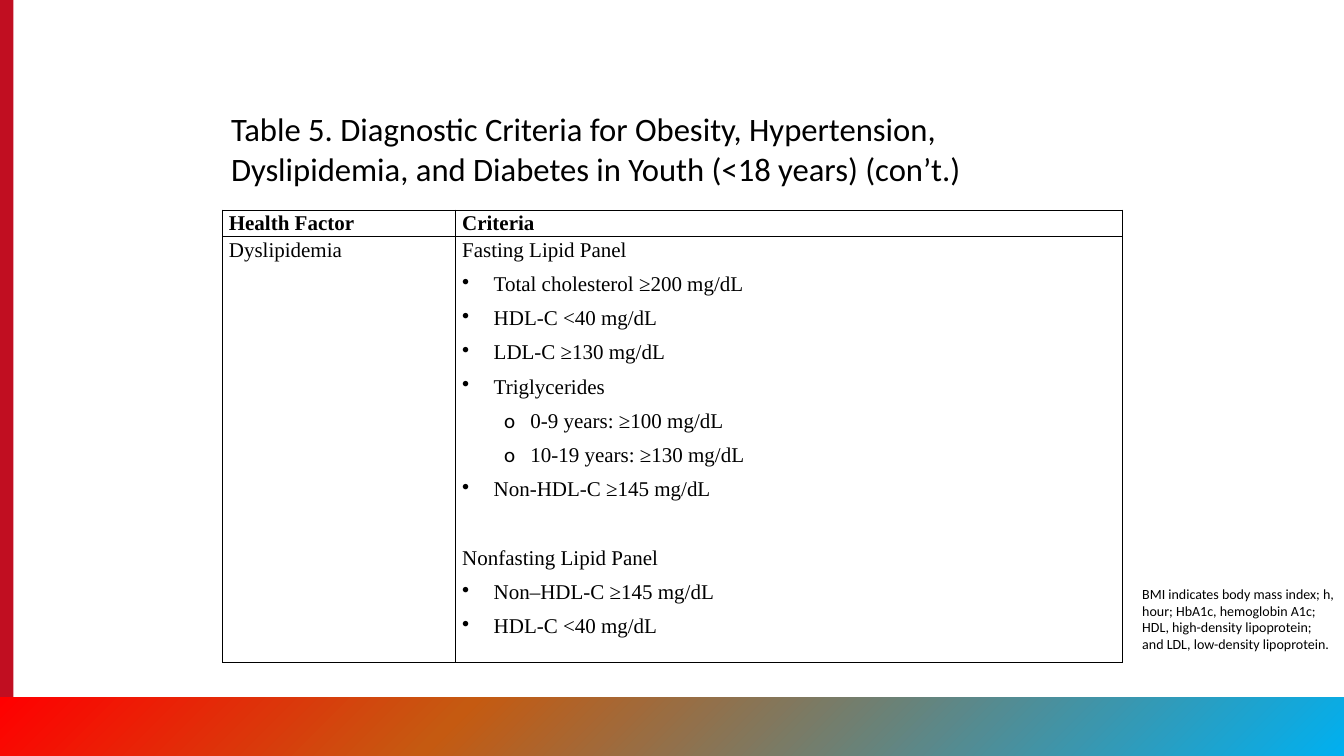
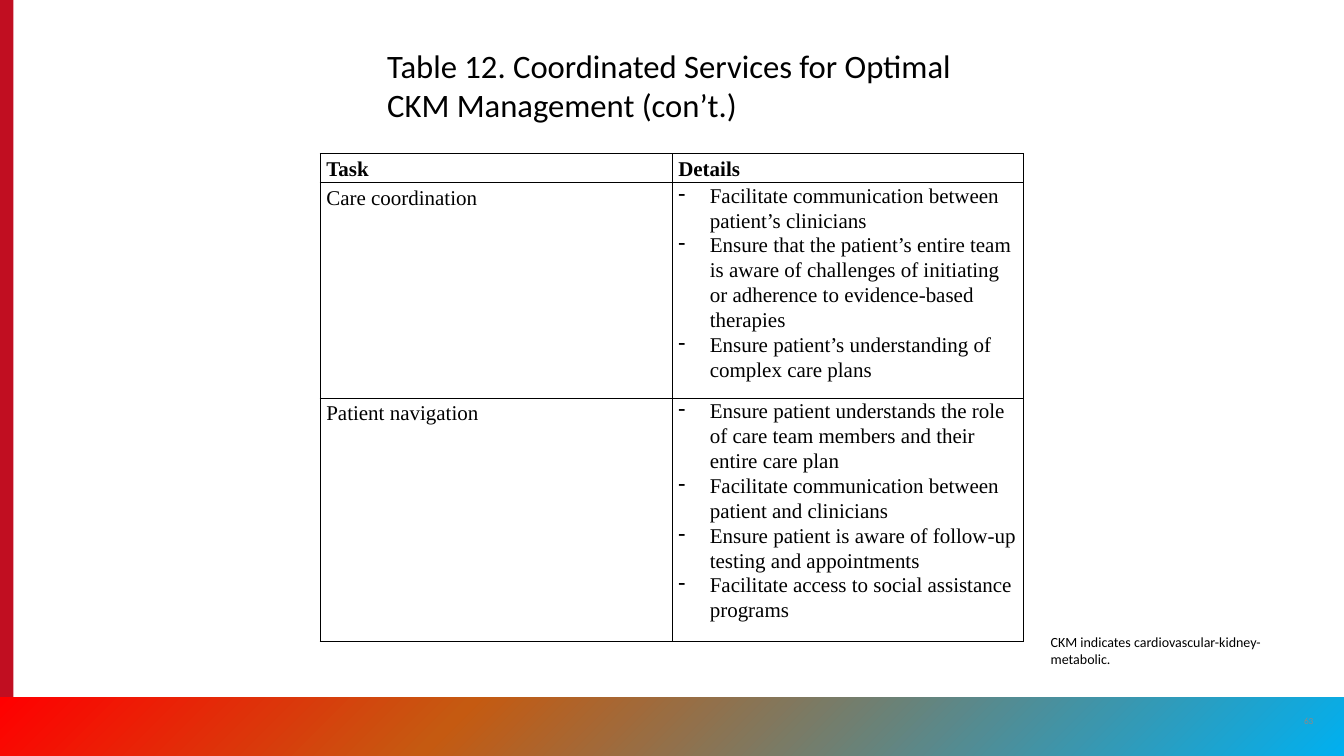
"""Build two slides with clinical criteria and care coordination tables."""
from copy import deepcopy

from lxml import etree
from pptx import Presentation
from pptx.dml.color import RGBColor
from pptx.enum import shapes, text
from pptx.oxml.ns import qn
from pptx.util import Pt

BLACK = RGBColor(0x00, 0x00, 0x00)
CRIMSON = RGBColor(0xC1, 0x0E, 0x21)
GREY = RGBColor(0x8A, 0x8B, 0x8A)
BAND = [(0, RGBColor(0x00, 0xB0, 0xF0)),
        (0.66, RGBColor(0xC5, 0x5A, 0x11)),
        (1, RGBColor(0xFF, 0x00, 0x00))]
SANS, SERIF = "Calibri", "Times New Roman"
WIDE, HIGH = 1152, 648

STYLES = {
    "plain": dict(after=8),
    "head": dict(after=8, bold=True),
    "part": dict(after=8, before=29.3),
    "dot": dict(after=8, mark="•", left=27, hang=27),
    "sub": dict(after=8, mark="o", left=58.5, hang=22.5, level=1),
    "task": dict(after=8, left=17.28, hang=18, lead=1.15),
    "title": dict(after=8, left=17.28, hang=18, lead=1.15, bold=True),
    "dash": dict(mark="-", left=27, hang=27),
}

SLIDES = [
    dict(
        title="Table 5. Diagnostic Criteria for Obesity, Hypertension, "
              "Dyslipidemia, and Diabetes in Youth (<18 years) (con’t.)",
        head=(190.8, 90, 771, 75),
        spot=(190.8, 180),
        cols=(200, 571),
        rows=(22.3, 365),
        cells=[
            [[("head", "Health Factor")], [("head", "Criteria")]],
            [[("plain", "Dyslipidemia")],
             [("plain", "Fasting Lipid Panel"),
              ("dot", "Total cholesterol ≥200 mg/dL"),
              ("dot", "HDL-C <40 mg/dL"),
              ("dot", "LDL-C ≥130 mg/dL"),
              ("dot", "Triglycerides"),
              ("sub", "0-9 years: ≥100 mg/dL"),
              ("sub", "10-19 years: ≥130 mg/dL"),
              ("dot", "Non-HDL-C ≥145 mg/dL"),
              ("part", "Nonfasting Lipid Panel"),
              ("dot", "Non–HDL-C ≥145 mg/dL"),
              ("dot", "HDL-C <40 mg/dL")]],
        ],
        note="BMI indicates body mass index; h, hour; HbA1c, hemoglobin A1c; "
             "HDL, high-density lipoprotein; and LDL, low-density lipoprotein.",
        foot=(972, 498.2, 180, 94),
        page=None),
    dict(
        title="Table 12. Coordinated Services for Optimal "
              "CKM Management (con’t.)",
        head=(324.7, 35.3, 502.6, 75),
        spot=(274.3, 131.8),
        cols=(301.7, 301.7),
        rows=(24.9, 184.3, 208.3),
        cells=[
            [[("title", "Task")], [("title", "Details")]],
            [[("task", "Care coordination")],
             [("dash", "Facilitate communication between patient’s clinicians"),
              ("dash", "Ensure that the patient’s entire team is aware of "
                       "challenges of initiating or adherence to "
                       "evidence-based therapies"),
              ("dash", "Ensure patient’s understanding of complex care plans")]],
            [[("task", "Patient navigation")],
             [("dash", "Ensure patient understands the role of care team "
                       "members and their entire care plan"),
              ("dash", "Facilitate communication between patient and clinicians"),
              ("dash", "Ensure patient is aware of follow-up testing and "
                       "appointments"),
              ("dash", "Facilitate access to social assistance programs")]],
        ],
        note="CKM indicates cardiovascular-kidney-metabolic.",
        foot=(893.5, 539.3, 196.6, 36),
        page="63"),
]


def pts(box):
    return [Pt(n) for n in box]


def put(para, words, size=18, font=SERIF, color=BLACK, bold=False, mark=None,
        left=0, hang=0, level=0, lead=1.07, before=0, after=0,
        align=text.PP_ALIGN.LEFT):
    para.level = level
    props = para._p.get_or_add_pPr()
    props.set("marL", str(Pt(left)))
    props.set("indent", str(-Pt(hang)))
    if mark:
        if mark == "o":
            etree.SubElement(props, qn("a:buFont"), typeface=SANS)
        etree.SubElement(props, qn("a:buChar"), char=mark)
    para.alignment, para.line_spacing = align, lead
    para.space_before, para.space_after = Pt(before), Pt(after)
    run = para.add_run()
    run.text = words
    run.font.name, run.font.size = font, Pt(size)
    run.font.bold, run.font.color.rgb = bold, color


def label(slide, box, words, anchor=text.MSO_ANCHOR.TOP, **form):
    frame = slide.shapes.add_textbox(*pts(box)).text_frame
    frame.word_wrap, frame.vertical_anchor = True, anchor
    put(frame.paragraphs[0], words, font=SANS, lead=1.0, **form)


def bar(slide, box):
    shape = slide.shapes.add_shape(shapes.MSO_SHAPE.RECTANGLE, *pts(box))
    shape.shadow.inherit = False
    shape.line.fill.background()
    return shape


def bands(slide):
    side = bar(slide, (0, 0, 11.5, HIGH))
    side.fill.solid()
    side.fill.fore_color.rgb = CRIMSON
    base = bar(slide, (0, 597.6, WIDE, 50.4))
    base.rotation = 180
    base.fill.gradient()
    base.fill.gradient_angle = 315
    stops = base._element.spPr.find(".//" + qn("a:gsLst"))
    stops.append(deepcopy(stops[0]))
    for stop, (place, color) in zip(base.fill.gradient_stops, BAND):
        stop.position, stop.color.rgb = place, color


def edge(cell):
    props = cell._tc.get_or_add_tcPr()
    for side in "LRTB":
        line = etree.SubElement(props, qn("a:ln" + side), w=str(Pt(1)))
        fill = etree.SubElement(line, qn("a:solidFill"))
        etree.SubElement(fill, qn("a:srgbClr"), val=str(BLACK))
    cell.fill.background()


def grid(slide, spot, cols, rows, cells):
    box = (*spot, sum(cols), sum(rows))
    table = slide.shapes.add_table(len(rows), len(cols), *pts(box)).table
    table.first_row = table.horz_banding = False
    for col, width in zip(table.columns, cols):
        col.width = Pt(width)
    for row, height, line in zip(table.rows, rows, cells):
        row.height = Pt(height)
        for cell, paras in zip(row.cells, line):
            cell.margin_left = cell.margin_right = Pt(5.4)
            cell.margin_top = cell.margin_bottom = 0
            edge(cell)
            frame = cell.text_frame
            for i, (kind, words) in enumerate(paras):
                para = frame.add_paragraph() if i else frame.paragraphs[0]
                put(para, words, **STYLES[kind])


def name(slide, box, words):
    title = slide.shapes.title
    title.left, title.top, title.width, title.height = pts(box)
    frame = title.text_frame
    frame.word_wrap = True
    frame.auto_size = text.MSO_AUTO_SIZE.SHAPE_TO_FIT_TEXT
    frame.vertical_anchor = text.MSO_ANCHOR.TOP
    put(frame.paragraphs[0], words, size=28, font=SANS, lead=1.0)


def main():
    deck = Presentation()
    deck.slide_width, deck.slide_height = Pt(WIDE), Pt(HIGH)
    for item in SLIDES:
        slide = deck.slides.add_slide(deck.slide_layouts[5])
        bands(slide)
        name(slide, item["head"], item["title"])
        grid(slide, item["spot"], item["cols"], item["rows"], item["cells"])
        label(slide, item["foot"], item["note"], size=12)
        if item["page"]:
            label(slide, (1104.5, 600.5, 34.6, 34.6), item["page"], size=8,
                  color=GREY, align=text.PP_ALIGN.CENTER,
                  anchor=text.MSO_ANCHOR.MIDDLE)
    deck.save("out.pptx")


if __name__ == "__main__":
    main()
